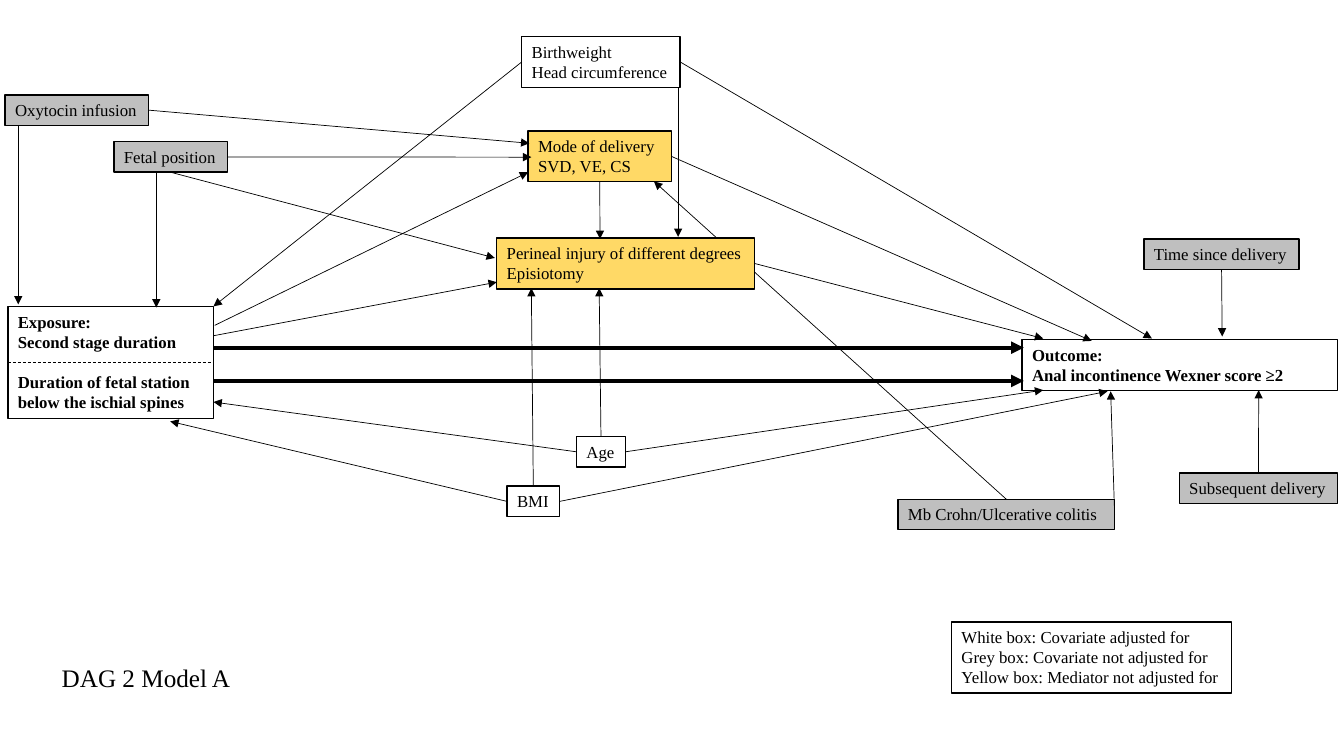
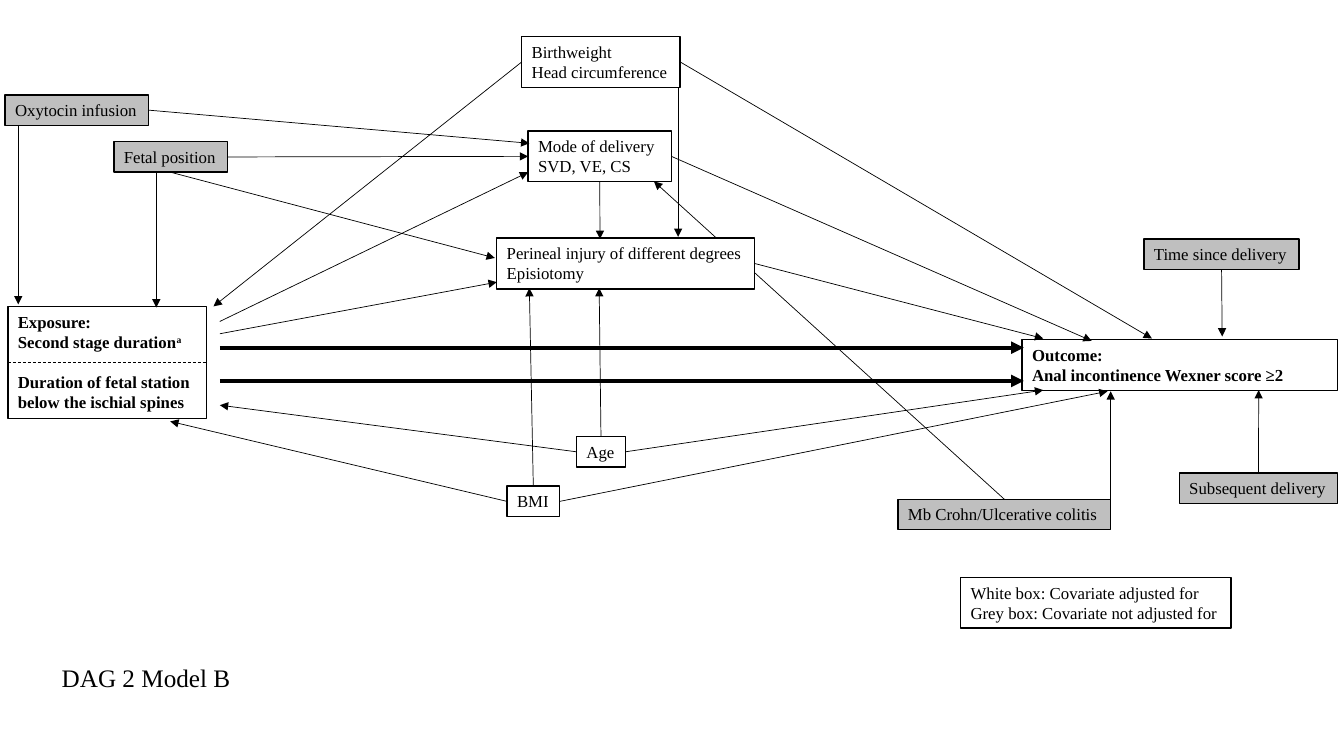
"""Build two causal diagrams of second stage duration and anal incontinence."""
import dataclasses
import enum

import pptx
import pptx.dml.color
import pptx.enum.dml
import pptx.enum.shapes
import pptx.enum.text
import pptx.oxml.ns
import pptx.util
from lxml import etree

Cm = pptx.util.Cm


class Site(enum.IntEnum):
    """Connection sites of a box."""
    TOP = 0
    LEFT = 1
    BOTTOM = 2
    RIGHT = 3


@dataclasses.dataclass(frozen=True)
class Theme:
    """Colours, type sizes in points and lengths in centimetres."""
    ink: str = "000000"
    adjusted: str = "FFFFFF"
    unadjusted: str = "BFBFBF"
    mediator: str = "FFD966"
    font: str = "Times New Roman"
    label_size: float = 12
    title_size: float = 18
    paragraph_gap: float = 13.8
    border: float = 1
    thin: float = 0.5
    heavy: float = 3
    padding: float = 0.26
    line_height: float = 0.51


@dataclasses.dataclass(frozen=True)
class Box:
    """A labelled variable; a caret marks superscript in its lines."""
    left: float
    top: float
    width: float
    fill: str
    lines: tuple
    bold: bool = False
    wrap: bool = False
    gap_before: int = -1


@dataclasses.dataclass(frozen=True)
class Model:
    """What distinguishes one diagram from the other."""
    title: str
    mediator_fill: str
    duration: str
    exposure_width: float
    crohn_width: float
    exit_x: float
    mode_exit: tuple
    injury_exit_y: float
    age_entry_y: float
    bmi_entry_x: float
    fetal_entry: tuple
    legend: Box


THEME = Theme()
LEGEND = ("White box: Covariate adjusted for",
          "Grey box: Covariate not adjusted for",
          "Yellow box: Mediator not adjusted for")
MODELS = (
    Model("DAG 2 Model A", THEME.mediator, "Second stage duration",
          5.18, 5.46, 5.38, (5.41, 8.2), 8.46, 10.13, 13.39, (13.39, 3.96),
          Box(23.98, 15.67, 7.06, THEME.adjusted, LEGEND)),
    Model("DAG 2 Model B", THEME.adjusted, "Second stage duration^a",
          5.0, 5.36, 5.54, (5.54, 8.1), 8.41, 10.21, 13.34, (13.31, 3.94),
          Box(24.21, 14.55, 6.81, THEME.adjusted, LEGEND[:2])),
)


def boxes_of(model):
    """Return the variables of a model by name."""
    white, grey = THEME.adjusted, THEME.unadjusted
    return {
        "exposure": Box(0.2, 7.73, model.exposure_width, white,
                        ("Exposure:", model.duration,
                         "Duration of fetal station",
                         "below the ischial spines"), bold=True, gap_before=2),
        "outcome": Box(25.76, 8.56, 7.95, white,
                       ("Outcome:", "Anal incontinence Wexner score ≥2"),
                       bold=True, wrap=True),
        "age": Box(14.53, 11, 1.23, white, ("Age",)),
        "bmi": Box(12.78, 12.25, 1.32, white, ("BMI",)),
        "injury": Box(12.52, 6, 6.5, model.mediator_fill,
                      ("Perineal injury of different degrees", "Episiotomy")),
        "mode": Box(13.31, 3.3, 3.61, model.mediator_fill,
                    ("Mode of delivery", "SVD, VE, CS")),
        "birth": Box(13.15, 0.92, 3.99, white,
                     ("Birthweight", "Head circumference")),
        "subsequent": Box(29.72, 11.92, 3.99, grey, ("Subsequent delivery",)),
        "time": Box(28.83, 6.02, 3.91, grey, ("Time since delivery",)),
        "fetal": Box(2.87, 3.57, 2.86, grey, ("Fetal position",)),
        "crohn": Box(22.63, 12.58, model.crohn_width, grey,
                     ("Mb Crohn/Ulcerative colitis",)),
        "oxytocin": Box(0.13, 2.39, 3.61, grey, ("Oxytocin infusion",)),
        "legend": model.legend,
    }


def arrows_of(model):
    """Return the thin arrows: a site or point to start from, and a point."""
    return (
        (("age", Site.RIGHT), (26.29, 9.83)),
        (("age", Site.LEFT), (model.exit_x, model.age_entry_y)),
        (("age", Site.TOP), (15.1, 7.26)),
        (("bmi", Site.TOP), (model.bmi_entry_x, 7.26)),
        (("bmi", Site.RIGHT), (27.91, 9.86)),
        (("bmi", Site.LEFT), (4.29, 10.62)),
        (("injury", Site.RIGHT), (26.29, 8.53)),
        (("mode", Site.RIGHT), (27.51, 8.59)),
        (("mode", Site.BOTTOM), (15.12, 6.02)),
        (("birth", Site.LEFT), (5.38, 7.72)),
        (("birth", Site.RIGHT), (29.03, 8.53)),
        ((17.09, 2.21), (17.09, 5.97)),
        (("subsequent", Site.TOP), (31.72, 9.83)),
        (("time", Site.BOTTOM), (30.8, 8.48)),
        (("fetal", Site.BOTTOM), (12.47, 6.5)),
        (("fetal", Site.RIGHT), model.fetal_entry),
        ((3.94, 4.34), (3.94, 7.75)),
        (("crohn", Site.RIGHT), (27.99, 9.86)),
        (("oxytocin", Site.RIGHT), (13.34, 3.61)),
        ((0.46, 3.15), (0.46, 7.67)),
        (model.mode_exit, (13.31, 4.34)),
        ((model.exit_x, model.injury_exit_y), (12.52, 7.11)),
    )


def rgb(code):
    """Turn a hex code into a colour."""
    return pptx.dml.color.RGBColor.from_string(code)


def apply(target, values):
    """Set each attribute of the target from a dict."""
    for name, value in values.items():
        setattr(target, name, value)


def format_font(font, size, bold=False):
    """Give a font the shared look."""
    apply(font, {"name": THEME.font, "size": pptx.util.Pt(size), "bold": bold})
    font.color.rgb = rgb(THEME.ink)


def format_line(line, width):
    """Give a line the ink colour and a width in points."""
    line.color.rgb = rgb(THEME.ink)
    line.width = pptx.util.Pt(width)


def add_label(paragraph, label, bold):
    """Write one line of text, raising what follows a caret."""
    base, _, raised = label.partition("^")
    for text, baseline in ((base, None), (raised, "30000")):
        if text:
            run = paragraph.add_run()
            run.text = text
            format_font(run.font, THEME.label_size, bold)
            if baseline:
                run._r.get_or_add_rPr().set("baseline", baseline)


def add_box(slide, box):
    """Draw a bordered box whose height follows its lines."""
    rows = len(box.lines) + (box.gap_before > 0)
    height = THEME.padding + THEME.line_height * rows
    shape = slide.shapes.add_textbox(
        Cm(box.left), Cm(box.top), Cm(box.width), Cm(height))
    shape.fill.solid()
    shape.fill.fore_color.rgb = rgb(box.fill)
    format_line(shape.line, THEME.border)
    frame = shape.text_frame
    apply(frame, {"word_wrap": box.wrap,
                  "auto_size": pptx.enum.text.MSO_AUTO_SIZE.SHAPE_TO_FIT_TEXT})
    for index, label in enumerate(box.lines):
        paragraph = frame.add_paragraph() if index else frame.paragraphs[0]
        if index == box.gap_before:
            paragraph.space_before = pptx.util.Pt(THEME.paragraph_gap)
        add_label(paragraph, label, box.bold)
    return shape


def add_line(slide, start, end, width):
    """Draw a plain straight line between two points."""
    line = slide.shapes.add_connector(
        pptx.enum.shapes.MSO_CONNECTOR.STRAIGHT, *map(Cm, start + end))
    format_line(line.line, width)
    etree.SubElement(line._element.spPr, pptx.oxml.ns.qn("a:effectLst"))
    return line


def add_arrow(slide, variables, start, end, width=THEME.thin):
    """Draw an arrow from a box site or a point."""
    glued = isinstance(start[0], str)
    arrow = add_line(slide, end if glued else start, end, width)
    if glued:
        name, site = start
        arrow.begin_connect(variables[name], int(site))
    etree.SubElement(arrow._element.spPr.get_or_add_ln(),
                     pptx.oxml.ns.qn("a:tailEnd"), type="triangle")
    return arrow


def add_title(slide, text):
    """Place the model name in the title placeholder."""
    title = slide.shapes.title
    apply(title, {"left": Cm(1.3), "top": Cm(16.56),
                  "width": Cm(4.8), "height": Cm(1.02)})
    frame = title.text_frame
    frame.text = text
    apply(frame, {"word_wrap": False,
                  "auto_size": pptx.enum.text.MSO_AUTO_SIZE.SHAPE_TO_FIT_TEXT,
                  "vertical_anchor": pptx.enum.text.MSO_ANCHOR.TOP})
    paragraph = frame.paragraphs[0]
    paragraph.alignment = pptx.enum.text.PP_ALIGN.LEFT
    format_font(paragraph.runs[0].font, THEME.title_size)


def add_diagram(deck, model):
    """Add the slide of one model."""
    slide = deck.slides.add_slide(deck.slide_layouts[5])
    add_title(slide, model.title)
    boxes = boxes_of(model)
    variables = {"crohn": add_box(slide, boxes.pop("crohn"))}
    add_arrow(slide, variables, ("crohn", Site.TOP), (16.48, 4.57))
    for name, box in boxes.items():
        variables[name] = add_box(slide, box)
    for start, end in arrows_of(model):
        add_arrow(slide, variables, start, end)
    for effect_y in (8.76, 9.6):
        add_arrow(slide, variables, (model.exit_x, effect_y),
                  (25.8, effect_y), THEME.heavy)
    divider = add_line(slide, (0.2, 9.12),
                       (0.2 + model.exposure_width, 9.12), THEME.thin)
    divider.line.dash_style = pptx.enum.dml.MSO_LINE.DASH


def main():
    """Build and save the deck."""
    deck = pptx.Presentation()
    apply(deck, {"slide_width": Cm(33.87), "slide_height": Cm(19.05)})
    for model in MODELS:
        add_diagram(deck, model)
    deck.save("out.pptx")


if __name__ == "__main__":
    main()
